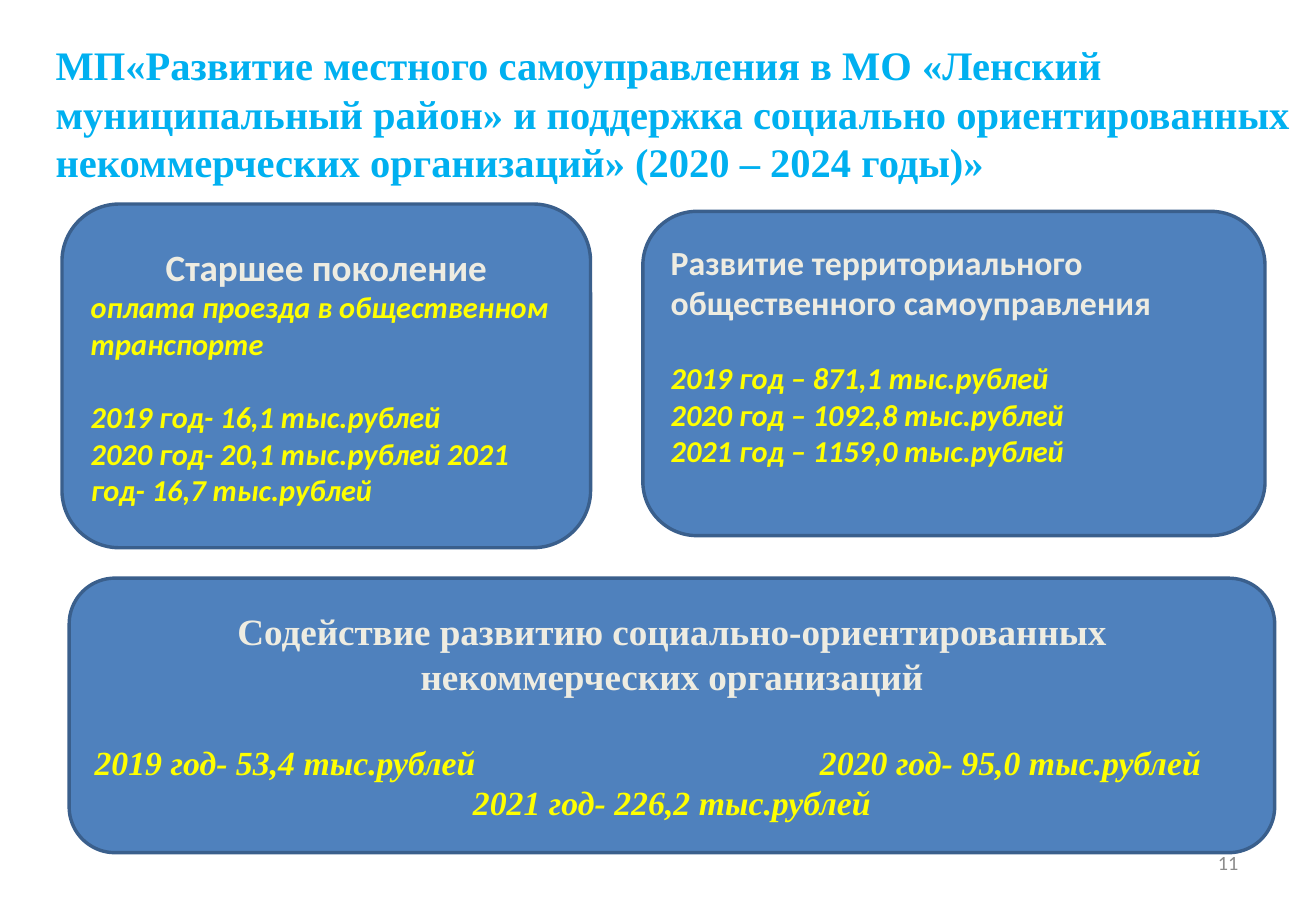
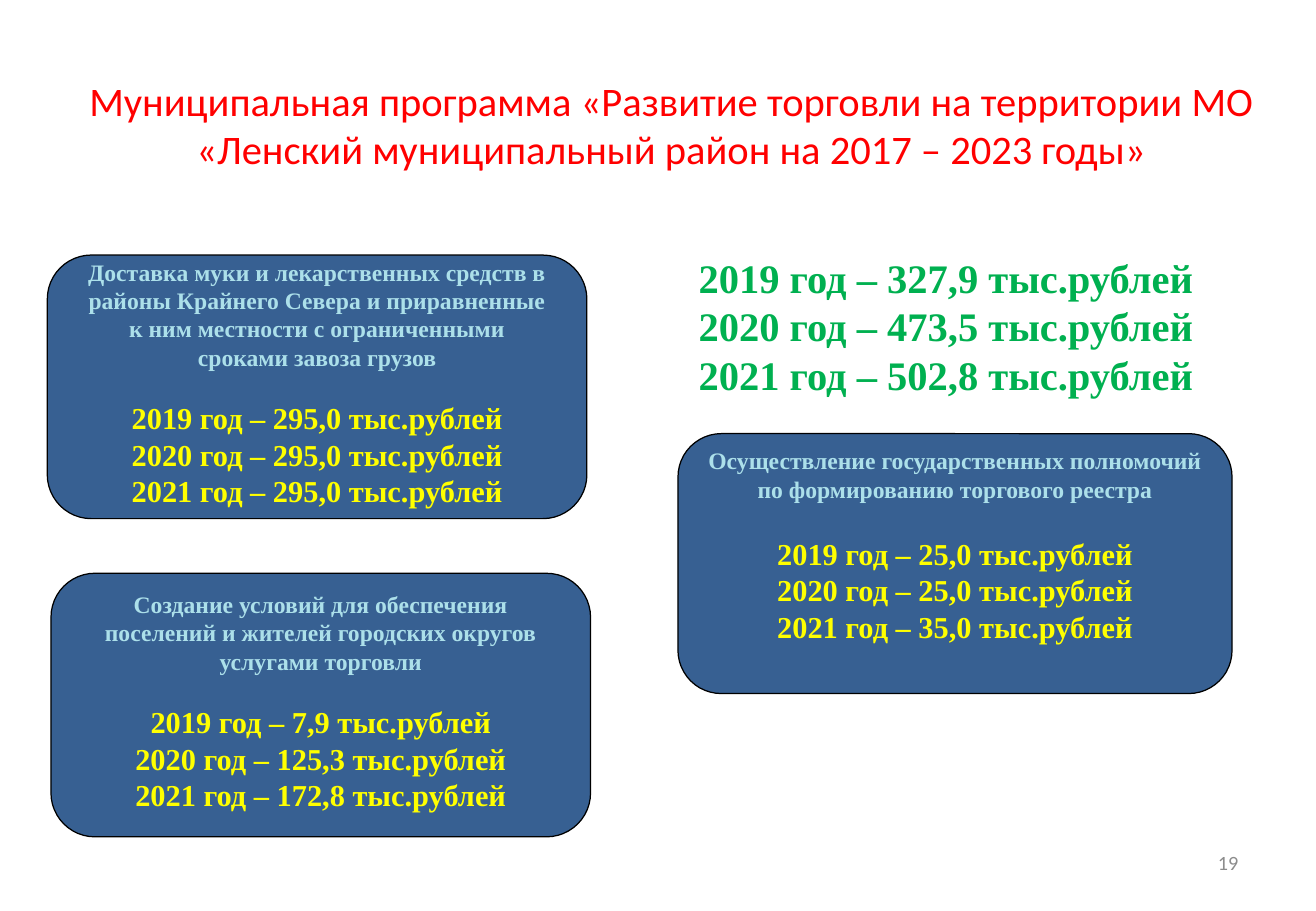
from pptx import Presentation
from pptx.dml.color import RGBColor
from pptx.enum.shapes import MSO_SHAPE as Preset
from pptx.enum.text import MSO_ANCHOR as Anchor, PP_ALIGN as Align
from pptx.oxml.ns import qn
from pptx.util import Inches, Pt
from lxml.etree import SubElement

COLORS = {
    "cyan": "00B0F0", "red": "FF0000", "green": "00B050", "yellow": "FFFF00",
    "cream": "EEECE1", "ice": "ACE0EA", "gray": "8C8C8C", "black": "000000",
    "blue": "4F81BD", "edge": "3A5F8C", "navy": "376092",
}
SERIF, SANS = "Times New Roman", "Calibri"

presentation = Presentation()
presentation.slide_width = Inches(10.83)
presentation.slide_height = Inches(7.5)
COLUMN = presentation.slide_width / 100
ROW = presentation.slide_height / 100


def add_panel(slide, place, fill, line, width):
    column, row, columns, rows = place
    shape = slide.shapes.add_shape(
        Preset.ROUNDED_RECTANGLE, round(column * COLUMN), round(row * ROW),
        round(columns * COLUMN), round(rows * ROW))
    shape.shadow.inherit = False
    shape.fill.solid()
    shape.fill.fore_color.rgb = RGBColor.from_string(COLORS[fill])
    shape.line.color.rgb = RGBColor.from_string(COLORS[line])
    shape.line.width = Pt(width)
    return shape


def add_text(slide, lines, place=None, shape=None, font=SERIF, size=24, color="black",
             bold=False, italic=False, align=Align.LEFT, gap=0, tab=None,
             anchor=Anchor.MIDDLE, bottom=0.05):
    if shape is None:
        column, row, columns, rows = place
        shape = slide.shapes.add_textbox(
            round(column * COLUMN), round(row * ROW),
            round(columns * COLUMN), round(rows * ROW))
    frame = shape.text_frame
    frame.word_wrap = True
    frame.vertical_anchor = anchor
    frame.margin_bottom = Inches(bottom)
    for index, text in enumerate(lines):
        paragraph = frame.paragraphs[0]
        if paragraph.runs:
            paragraph = frame.add_paragraph()
        paragraph.alignment = align
        if index == 0 and gap:
            paragraph.space_before = Pt(gap)
        if "\t" in text:
            stops = SubElement(paragraph._p.get_or_add_pPr(), qn("a:tabLst"))
            SubElement(stops, qn("a:tab"), pos=str(Inches(tab)), algn="l")
        run = paragraph.add_run()
        run.text = text
        run.font.name = font
        run.font.size = Pt(size)
        run.font.bold = bold
        run.font.italic = italic
        run.font.color.rgb = RGBColor.from_string(COLORS[color])
    return shape


pages = [
    ("11", "МП«Развитие местного самоуправления в МО «Ленский муниципальный район» "
           "и поддержка социально ориентированных некоммерческих организаций» "
           "(2020 – 2024 годы)»",
     dict(place=(3.32, 3.33, 96.68, 18.13), color="cyan", bold=True)),
    ("19", "Муниципальная программа «Развитие торговли на территории МО "
           "«Ленский муниципальный район на 2017 – 2023 годы»",
     dict(place=(4.89, 8.8, 92.24, 9.73), color="red", font=SANS, align=Align.CENTER)),
]
slides = []
for number, title, style in pages:
    slide = presentation.slides.add_slide(presentation.slide_layouts[6])
    add_text(slide, [title], **style)
    add_text(slide, [number], place=(71.65, 92.67, 23.36, 5.33), font=SANS, size=12,
             color="gray", align=Align.RIGHT, anchor=Anchor.TOP)
    slides.append(slide)
support_slide, trade_slide = slides

heading = dict(color="cream", bold=True)
amounts = dict(color="yellow", bold=True, italic=True)
support_panels = [
    ((4.71, 22.4, 40.17, 37.73), [
        (["Старшее поколение"], dict(heading, font=SANS, size=22, align=Align.CENTER)),
        (["оплата проезда в общественном транспорте"], dict(amounts, font=SANS, size=18)),
        (["2019 год- 16,1 тыс.рублей",
          "2020 год- 20,1 тыс.рублей 2021 год- 16,7 тыс.рублей"],
         dict(amounts, font=SANS, size=18, gap=22)),
    ]),
    ((5.26, 63.47, 91.6, 30.13), [
        (["Содействие развитию социально-ориентированных некоммерческих организаций"],
         dict(heading, size=22, align=Align.CENTER)),
        (["2019 год- 53,4 тыс.рублей\t2020 год- 95,0 тыс.рублей"],
         dict(amounts, size=20, gap=26, tab=5.97)),
        (["2021 год- 226,2 тыс.рублей"], dict(amounts, size=20, align=Align.CENTER)),
    ]),
    ((48.85, 23.2, 47.28, 35.6), [
        (["Развитие территориального общественного самоуправления"],
         dict(heading, font=SANS, size=20)),
        (["2019 год – 871,1 тыс.рублей", "2020 год – 1092,8 тыс.рублей",
          "2021 год – 1159,0 тыс.рублей"],
         dict(amounts, font=SANS, size=18, gap=22, bottom=0.35)),
    ]),
]
for place, blocks in support_panels:
    panel = add_panel(support_slide, place, "blue", "edge", 2)
    for lines, style in blocks:
        add_text(support_slide, lines, shape=panel, **style)

trade_panels = [
    ((3.6, 28, 41, 28.93), 17, 0.11,
     ["Доставка муки и лекарственных средств в", "районы Крайнего Севера и приравненные",
      "к ним местности с ограниченными", "сроками завоза грузов"],
     ["295,0", "295,0", "295,0"]),
    ((51.52, 47.6, 42.1, 28.53), 19, 0.35,
     ["Осуществление государственных полномочий", "по формированию торгового реестра"],
     ["25,0", "25,0", "35,0"]),
    ((3.88, 62.93, 41, 28.93), 17, 0.11,
     ["Создание условий для обеспечения", "поселений и жителей городских округов",
      "услугами торговли"],
     ["7,9", "125,3", "172,8"]),
]
for place, gap, bottom, measure, sums in trade_panels:
    panel = add_panel(trade_slide, place, "navy", "black", 0.75)
    add_text(trade_slide, measure, shape=panel, size=14, color="ice", bold=True,
             align=Align.CENTER)
    add_text(trade_slide,
             [f"{year} год – {amount} тыс.рублей" for year, amount in enumerate(sums, 2019)],
             shape=panel, size=18, color="yellow", bold=True, align=Align.CENTER,
             gap=gap, bottom=bottom)

totals = ["327,9", "473,5", "502,8"]
add_text(trade_slide,
         [f"{year} год – {amount} тыс.рублей" for year, amount in enumerate(totals, 2019)],
         place=(52.17, 28.27, 41.83, 14.93), color="green", bold=True)

presentation.save("out.pptx")
